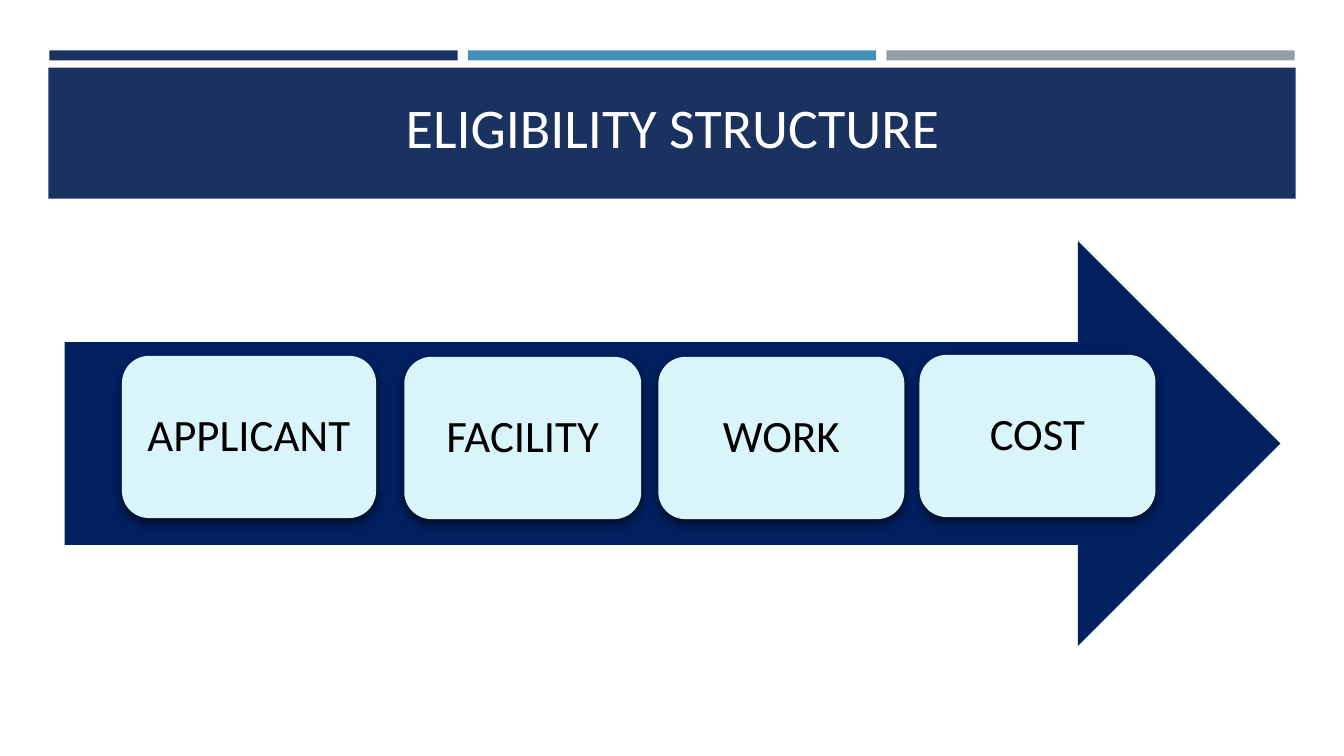
import pptx
import pptx.dml.color
import pptx.enum.shapes
import pptx.enum.text
import pptx.oxml
import pptx.util
from pptx.util import Inches

SHAPE = pptx.enum.shapes.MSO_SHAPE
ANCHOR = pptx.enum.text.MSO_ANCHOR
NAVY = "1A3260"
SHADOW = (
    '<a:effectLst xmlns:a="http://schemas.openxmlformats.org/drawingml/2006/main">'
    '<a:outerShdw blurRad="88900" dist="38100" dir="5040000" rotWithShape="0">'
    '<a:srgbClr val="000000"><a:alpha val="60000"/></a:srgbClr>'
    '</a:outerShdw></a:effectLst>'
)


def color(code):
    return pptx.dml.color.RGBColor.from_string(code)


def add_block(slide, kind, box, fill):
    block = slide.shapes.add_shape(kind, *map(Inches, box))
    block.shadow.inherit = False
    block.fill.solid()
    block.fill.fore_color.rgb = color(fill)
    block.line.fill.background()
    return block


def set_text(shape, text, size, ink, anchor):
    frame = shape.text_frame
    frame.text = text
    frame.word_wrap = True
    frame.vertical_anchor = anchor
    line = frame.paragraphs[0]
    line.alignment = pptx.enum.text.PP_ALIGN.CENTER
    line.line_spacing = 0.9
    font = line.runs[0].font
    font.name = "Calibri"
    font.size = pptx.util.Pt(size)
    font.color.rgb = color(ink)


def add_title(slide, text):
    title = slide.shapes.add_textbox(*map(Inches, (0.64, 0.53, 12.06, 1.11)))
    set_text(title, text, 40, "FFFFFF", ANCHOR.BOTTOM)


def add_card(slide, text, left, top, width):
    card = add_block(slide, SHAPE.ROUNDED_RECTANGLE, (left, top, width, 1.61), "DAF5FA")
    props = card._element.spPr
    props.remove(props.find(pptx.oxml.ns.qn("a:effectLst")))
    props.append(pptx.oxml.parse_xml(SHADOW))
    set_text(card, text, 32, "000000", ANCHOR.MIDDLE)
    frame = card.text_frame
    frame.margin_left = frame.margin_right = Inches(0.13)
    frame.margin_top = frame.margin_bottom = Inches(0.13)


def main():
    deck = pptx.Presentation()
    deck.slide_width, deck.slide_height = Inches(13.33), Inches(7.5)
    slide = deck.slides.add_slide(deck.slide_layouts[6])

    for i, fill in enumerate((NAVY, "4590B8", "969FA7")):
        add_block(slide, SHAPE.RECTANGLE, (0.49 + 4.15 * i, 0.5, 4.05, 0.1), fill)
    add_block(slide, SHAPE.RECTANGLE, (0.48, 0.67, 12.37, 1.3), NAVY)
    add_title(slide, "ELIGIBILITY STRUCTURE")

    add_block(slide, SHAPE.RIGHT_ARROW, (0.64, 2.39, 12.06, 4.02), "002060")
    for text, left, top, width in (
        ("APPLICANT", 1.21, 3.53, 2.52),
        ("FACILITY", 4.01, 3.54, 2.35),
        ("WORK", 6.53, 3.54, 2.44),
        ("COST", 9.12, 3.52, 2.34),
    ):
        add_card(slide, text, left, top, width)

    deck.save("out.pptx")


if __name__ == "__main__":
    main()
